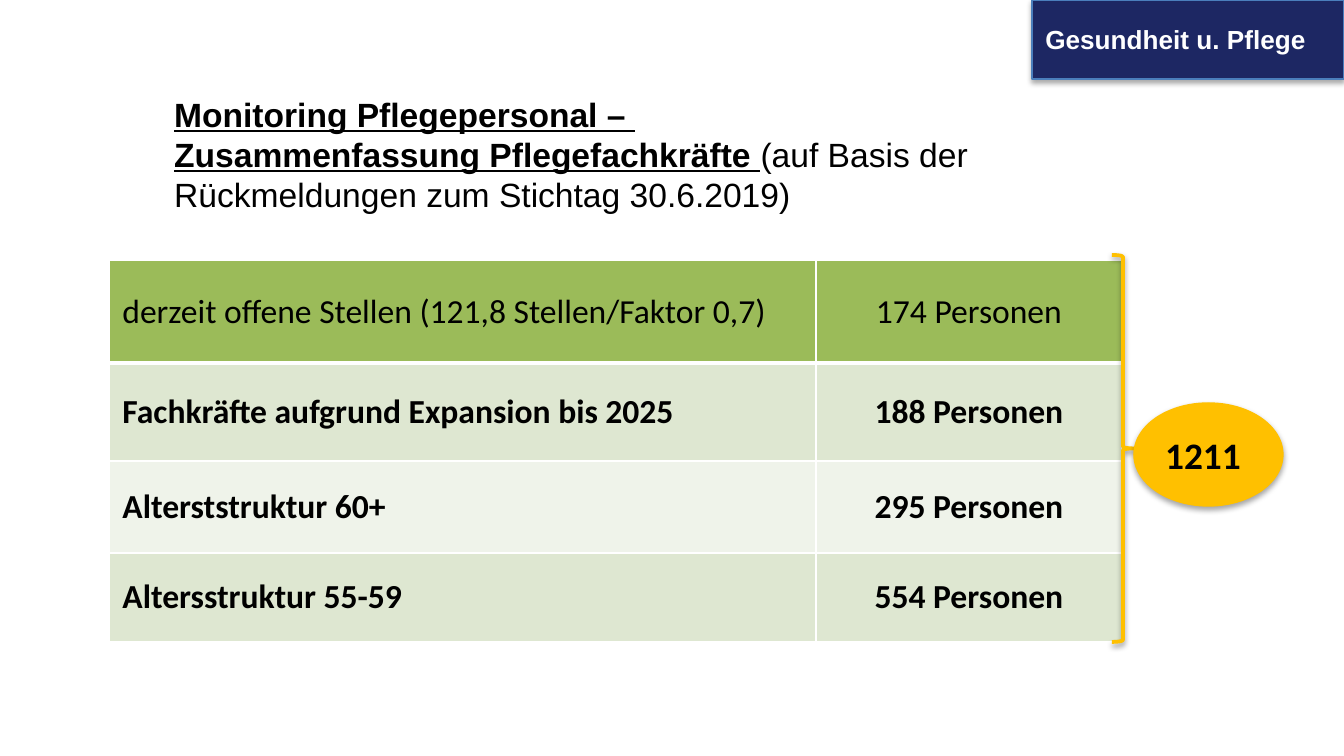
"""Build the slide on the nursing staff monitoring summary."""
from dataclasses import dataclass

import pptx
import pptx.dml.color
import pptx.enum.shapes
import pptx.enum.text
import pptx.oxml
import pptx.oxml.ns
import pptx.util

SCALE = 914400 / 134.4
KINDS = pptx.enum.shapes.MSO_SHAPE
ALIGN = pptx.enum.text.PP_ALIGN


@dataclass(frozen=True)
class Theme:
    """Colours, fonts and type sizes of the slide."""
    navy: str = "1D2763"
    blue: str = "4B7EBC"
    gold: str = "FFC000"
    white: str = "FFFFFF"
    black: str = "000000"
    rows: tuple = ("9BBB59", "DEE7D1", "EFF3EA", "DEE7D1")
    sans: str = "Arial"
    body: str = "Calibri"
    small: int = 14
    text: int = 18
    large: int = 20


THEME = Theme()
ROWS = (
    ("derzeit offene Stellen (121,8 Stellen/Faktor 0,7)", "174 Personen"),
    ("Fachkräfte aufgrund Expansion bis 2025", "188 Personen"),
    ("Alterststruktur 60+", "295 Personen"),
    ("Altersstruktur 55-59", "554 Personen"),
)
WIDTHS = (707, 306)
HEIGHTS = (103, 98, 92, 89)


def px(num):
    """Turn pixels into EMU."""
    return pptx.util.Emu(round(num * SCALE))


def rgb(code):
    """Turn a hex code into a colour."""
    return pptx.dml.color.RGBColor.from_string(code)


def style(run, face, size, color=THEME.black, bold=False, under=False):
    """Set the font of a run."""
    font = run.font
    font.name, font.size = face, pptx.util.Pt(size)
    font.bold, font.underline = bold, under
    font.color.rgb = rgb(color)


def add_shadow(shape, alpha, dist):
    """Give a shape a soft shadow that falls straight down."""
    shape.shadow.inherit = False
    effects = shape._element.spPr.find(pptx.oxml.ns.qn("a:effectLst"))
    effects.append(pptx.oxml.parse_xml(
        f'<a:outerShdw {pptx.oxml.ns.nsdecls("a")} blurRad="{pptx.util.Pt(3.1)}" '
        f'dist="{pptx.util.Pt(dist)}" dir="5400000" rotWithShape="0">'
        f'<a:srgbClr val="{THEME.black}"><a:alpha val="{alpha * 1000}"/>'
        '</a:srgbClr></a:outerShdw>'))


def add_shape(slide, kind, box, line, fill=None, width=0.75, alpha=35, dist=1.8):
    """Add a preset shape with outline and shadow."""
    shape = slide.shapes.add_shape(kind, *map(px, box))
    if fill:
        shape.fill.solid()
        shape.fill.fore_color.rgb = rgb(fill)
    else:
        shape.fill.background()
    shape.line.color.rgb = rgb(line)
    shape.line.width = pptx.util.Pt(width)
    add_shadow(shape, alpha, dist)


def add_text(slide, box, text, **look):
    """Add a text box and return its paragraph."""
    frame = slide.shapes.add_textbox(*map(px, box)).text_frame
    frame.word_wrap = True
    frame.auto_size = pptx.enum.text.MSO_AUTO_SIZE.SHAPE_TO_FIT_TEXT
    para = frame.paragraphs[0]
    para.text = text
    for run in para.runs:
        style(run, **look)
    return para


def add_edges(cell, base):
    """Draw white borders around a cell."""
    props = cell._tc.get_or_add_tcPr()
    for side, width in zip("LRTB", (1, 1, 1, base)):
        props.append(pptx.oxml.parse_xml(
            f'<a:ln{side} {pptx.oxml.ns.nsdecls("a")} w="{pptx.util.Pt(width)}">'
            f'<a:solidFill><a:srgbClr val="{THEME.white}"/></a:solidFill>'
            f'</a:ln{side}>'))


def fill_cell(cell, text, color, head, align):
    """Write and format one table cell."""
    add_edges(cell, 3 if head else 1)
    cell.fill.solid()
    cell.fill.fore_color.rgb = rgb(color)
    cell.vertical_anchor = pptx.enum.text.MSO_ANCHOR.MIDDLE
    para = cell.text_frame.paragraphs[0]
    para.text = text
    para.alignment = align
    style(para.runs[0], THEME.body, THEME.text, bold=not head)


def add_table(slide, left, top):
    """Add the table of staff needs."""
    table = slide.shapes.add_table(
        len(ROWS), len(WIDTHS), px(left), px(top),
        px(sum(WIDTHS)), px(sum(HEIGHTS))).table
    for col, width in zip(table.columns, WIDTHS):
        col.width = px(width)
    for i, texts in enumerate(ROWS):
        table.rows[i].height = px(HEIGHTS[i])
        for j, text in enumerate(texts):
            fill_cell(table.cell(i, j), text, THEME.rows[i], i == 0,
                      ALIGN.CENTER if j else ALIGN.LEFT)


def add_title(slide):
    """Add the title with its plain ending."""
    para = add_text(
        slide, (161, 87, 949, 136),
        "Monitoring Pflegepersonal – \vZusammenfassung Pflegefachkräfte ",
        face=THEME.sans, size=THEME.text, bold=True, under=True)
    run = para.add_run()
    run.text = "(auf Basis der Rückmeldungen zum Stichtag 30.6.2019)"
    style(run, THEME.sans, THEME.text)


def main():
    """Build and save the slide."""
    deck = pptx.Presentation()
    deck.slide_width, deck.slide_height = px(1344), px(756)
    slide = deck.slides.add_slide(deck.slide_layouts[6])
    add_shape(slide, KINDS.RECTANGLE, (1032, 0, 312, 79), THEME.blue, THEME.navy)
    add_text(slide, (1032, 17, 297, 46), "Gesundheit u. Pflege",
             face=THEME.sans, size=THEME.small, color=THEME.white, bold=True)
    add_title(slide)
    add_table(slide, 109, 260)
    add_shape(slide, KINDS.RIGHT_BRACE, (1112, 255, 22, 387), THEME.gold,
              width=2, alpha=38, dist=1.6)
    add_shape(slide, KINDS.OVAL, (1134, 403, 149, 103), THEME.gold, THEME.gold)
    add_text(slide, (1152, 426, 113, 59), "1211",
             face=THEME.body, size=THEME.large, bold=True)
    deck.save("out.pptx")


if __name__ == "__main__":
    main()
